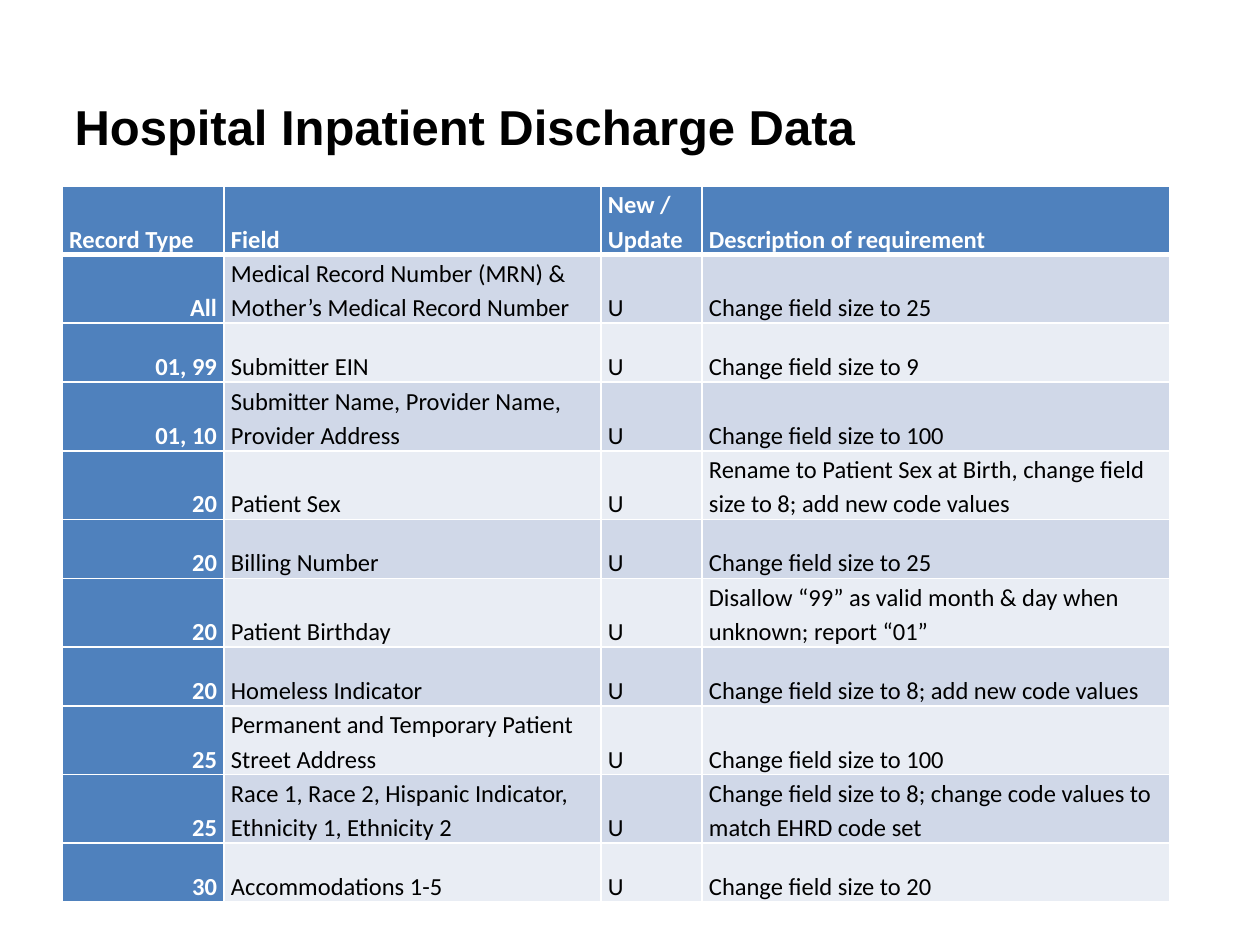
from lxml import etree
from pptx import Presentation
from pptx import util as u
from pptx.dml.color import RGBColor
from pptx.enum import text
from pptx.oxml import ns

PX = u.Inches(1) / 126
WHITE, BLACK, BLUE = "FFFFFF", "000000", "4F81BD"
BANDS = ["D0D8E8", "E9EDF4"]
COLUMNS = [162, 377, 101, 468]
TALL, SHORT = 66, 59
HEADER = ["Record Type", "Field", "New / Update", "Description of requirement"]
RECORDS = [
    ("All", "Medical Record Number (MRN) & Mother’s Medical Record Number",
     "Change field size to 25", TALL),
    ("01, 99", "Submitter EIN", "Change field size to 9", SHORT),
    ("01, 10", "Submitter Name, Provider Name, Provider Address",
     "Change field size to 100", TALL),
    ("20", "Patient Sex",
     "Rename to Patient Sex at Birth, change field size to 8; add new code values", TALL),
    ("20", "Billing Number", "Change field size to 25", SHORT),
    ("20", "Patient Birthday",
     "Disallow “99” as valid month & day when unknown; report “01”", TALL),
    ("20", "Homeless Indicator", "Change field size to 8; add new code values", SHORT),
    ("25", "Permanent and Temporary Patient Street Address",
     "Change field size to 100", TALL),
    ("25", "Race 1, Race 2, Hispanic Indicator, Ethnicity 1, Ethnicity 2",
     "Change field size to 8; change code values to match EHRD code set", TALL),
    ("30", "Accommodations 1-5", "Change field size to 20", SHORT),
]


def px(length):
    return u.Emu(round(length * PX))


def colour(value):
    return RGBColor.from_string(value)


def assign(target, values):
    for name, value in values.items():
        setattr(target, name, value)


def format_font(para, name, size, shade, bold):
    assign(para.font, {"name": name, "size": u.Pt(size), "bold": bold})
    para.font.color.rgb = colour(shade)


def add_title(page, wording):
    box = page.shapes.title
    assign(box, {"left": px(62), "top": px(53), "width": px(1108), "height": px(145)})
    frame = box.text_frame
    assign(frame, {"text": wording, "word_wrap": True,
                   "vertical_anchor": text.MSO_ANCHOR.MIDDLE})
    para = frame.paragraphs[0]
    para.alignment = text.PP_ALIGN.LEFT
    format_font(para, "Arial", 28, BLACK, True)


def add_borders(cell, widths):
    properties = cell._tc.get_or_add_tcPr()
    for side, width in widths.items():
        line = etree.SubElement(properties, ns.qn(f"a:ln{side}"), w=str(u.Pt(width)))
        fill = etree.SubElement(line, ns.qn("a:solidFill"))
        etree.SubElement(fill, ns.qn("a:srgbClr"), val=WHITE)


def fill_cell(cell, wording, row, column):
    strong = row == 0 or column == 0
    assign(cell, {"text": wording, "vertical_anchor": text.MSO_ANCHOR.BOTTOM,
                  "margin_left": px(7), "margin_right": px(7),
                  "margin_top": 0, "margin_bottom": 0})
    add_borders(cell, {"L": 1, "R": 1, "T": 3 if row == 1 else 1,
                       "B": 3 if row == 0 else 1})
    cell.fill.solid()
    cell.fill.fore_color.rgb = colour(BLUE if strong else BANDS[(row - 1) % 2])
    para = cell.text_frame.paragraphs[0]
    right = row > 0 and column == 0
    assign(para, {"line_spacing": 1.15,
                  "alignment": text.PP_ALIGN.RIGHT if right else text.PP_ALIGN.LEFT})
    format_font(para, "Calibri", 14, WHITE if strong else BLACK, strong)


def add_requirements(page):
    rows = [HEADER] + [[kind, field, "U", change] for kind, field, change, _ in RECORDS]
    heights = [TALL] + [record[-1] for record in RECORDS]
    table = page.shapes.add_table(len(rows), len(COLUMNS), px(62), px(186),
                                  px(sum(COLUMNS)), px(sum(heights))).table
    for column, width in zip(table.columns, COLUMNS):
        column.width = px(width)
    for number, (values, height) in enumerate(zip(rows, heights)):
        table.rows[number].height = px(height)
        for column, wording in enumerate(values):
            fill_cell(table.cell(number, column), wording, number, column)


def main():
    deck = Presentation()
    assign(deck, {"slide_width": u.Inches(10), "slide_height": u.Inches(7.5)})
    page = deck.slides.add_slide(deck.slide_layouts[5])
    add_title(page, "Hospital Inpatient Discharge Data")
    add_requirements(page)
    deck.save("out.pptx")


if __name__ == "__main__":
    main()
